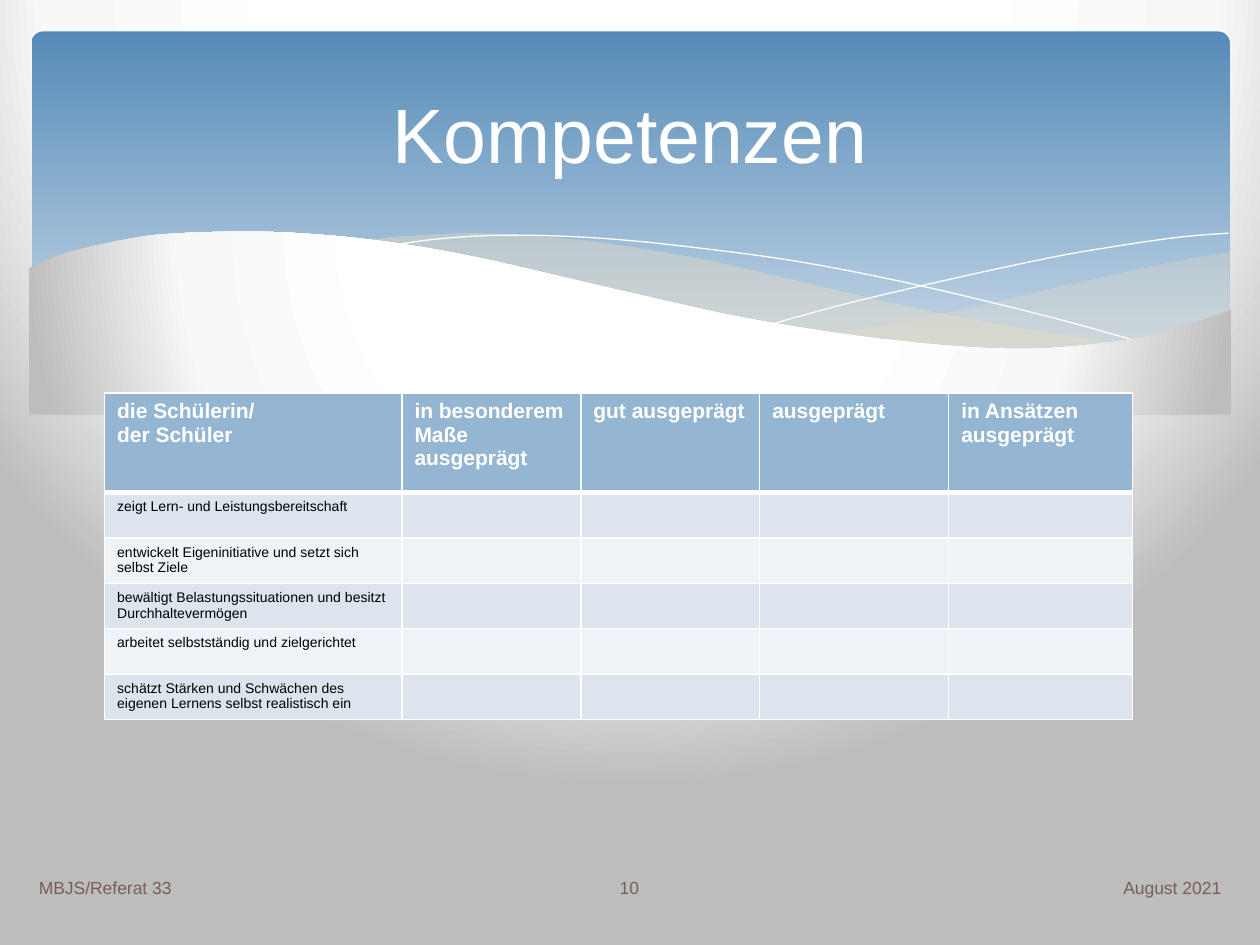
from lxml import etree
from pptx import Presentation
from pptx import util as u
from pptx.dml.color import RGBColor
from pptx.enum import shapes, text
from pptx.oxml import parse_xml
from pptx.oxml.ns import nsdecls, qn

WIDE, HIGH = 10, 7.5
FONT = "Arial"
HUES = {"white": "FFFFFF", "sand": "EBDDC3", "brown": "775F55", "black": "000000",
        "head": "94B6D2", "odd": "DCE5EE", "even": "EEF3F7"}
GLOW = [(40, "FFFFFF"), (74, "F8F8F8"), (100, "BDBDBD")]
ROUND = ('<a:path path="circle"><a:fillToRect l="20000" t="-40000" '
         'r="20000" b="140000"/></a:path>')
SKY = [(0, "558BB8"), (90, "BFD3E4")]
DOWN = '<a:lin ang="5400000" scaled="0"/>'

# Key points of the curves, in inches
BACK = ([(9.76, 2), (9.35, 2.07), (8.61, 2.23), (7.79, 2.42), (7.06, 2.57), (6.61, 2.65)],
        [(6.61, 2.65), (7.05, 2.71), (7.57, 2.76), (8.03, 2.78), (8.54, 2.76),
         (9.05, 2.69), (9.42, 2.59), (9.76, 2.47)])
FRONT = ([(8.93, 2.73), (8.37, 2.65), (7.75, 2.54), (7.06, 2.4), (6.29, 2.22),
          (5.69, 2.08), (5.14, 1.98), (4.65, 1.91), (4.2, 1.87), (3.8, 1.85),
          (3.44, 1.86), (3.13, 1.88), (2.86, 1.91)],
         [(2.86, 1.91), (3.42, 1.99), (4.04, 2.11), (4.49, 2.22), (5.3, 2.4),
          (6.01, 2.55), (6.65, 2.66), (7.22, 2.74), (7.73, 2.77), (8.18, 2.78),
          (8.57, 2.77), (8.93, 2.73)])
FALL = [(3.09, 1.95), (3.44, 1.9), (3.87, 1.87), (4.33, 1.87), (4.89, 1.9), (5.56, 1.97),
        (6.36, 2.08), (7.27, 2.26), (8.31, 2.51), (9.07, 2.72)]
RISE = [(6.13, 2.57), (6.72, 2.41), (7.48, 2.23), (8.36, 2.04), (8.95, 1.94),
        (9.38, 1.88), (9.75, 1.85)]
CREST = [(9.77, 2.46), (9.4, 2.59), (8.99, 2.69), (8.5, 2.75), (8.09, 2.77), (7.61, 2.75),
         (7.08, 2.7), (6.48, 2.62), (5.79, 2.5), (5.03, 2.33), (4.47, 2.2), (3.91, 2.07),
         (3.4, 1.97), (2.92, 1.9), (2.5, 1.86), (2.11, 1.84), (1.77, 1.84), (1.46, 1.85),
         (1.19, 1.87), (0.95, 1.91), (0.67, 1.97), (0.46, 2.03), (0.23, 2.13)]
BASE = [(0.23, 3.29), (9.77, 3.29)]

# Table content
COLS = [2.36, 1.42, 1.42, 1.5, 1.46]
HEADS = ["die Schülerin/\nder Schüler", "in besonderem Maße ausgeprägt",
         "gut ausgeprägt", "ausgeprägt", "in Ansätzen ausgeprägt"]
SKILLS = ["zeigt Lern- und Leistungsbereitschaft",
          "entwickelt Eigeninitiative und setzt sich selbst Ziele",
          "bewältigt Belastungssituationen und besitzt Durchhaltevermögen",
          "arbeitet selbstständig und zielgerichtet",
          "schätzt Stärken und Schwächen des eigenen Lernens selbst realistisch ein"]


def color(name):
    return RGBColor.from_string(HUES[name])


def box(*sides):
    return [u.Inches(s) for s in sides]


def write(frame, words, size=10, hue="brown", bold=False, align="LEFT"):
    """Fill a text frame, one paragraph per line."""
    frame.text = words
    frame.word_wrap = True
    for para in frame.paragraphs:
        para.alignment = getattr(text.PP_ALIGN, align)
        for run in para.runs:
            font = run.font
            font.name, font.size, font.bold = FONT, u.Pt(size), bold
            font.color.rgb = color(hue)
        if not para.runs:
            etree.SubElement(para._p, qn("a:endParaRPr"), sz=str(size * 100))


def blend(owner, fill, stops, way):
    """Give a shape or slide a gradient with its own stops."""
    fill.gradient()
    old = next(owner.element.iter(qn("a:gradFill")))
    marks = "".join(f'<a:gs pos="{at * 1000}"><a:srgbClr val="{hue}"/></a:gs>'
                    for at, hue in stops)
    old.getparent().replace(old, parse_xml(
        f'<a:gradFill {nsdecls("a")} rotWithShape="1"><a:gsLst>{marks}</a:gsLst>{way}</a:gradFill>'))


def smooth(keys, steps=6):
    """Run a Catmull-Rom curve through the key points."""
    ends = [keys[0], *keys, keys[-1]]
    curve = []
    for a, b, c, d in zip(ends, ends[1:], ends[2:], ends[3:]):
        for t in (n / steps for n in range(steps)):
            curve.append(tuple(
                (2 * q + (r - p) * t + (2 * p - 5 * q + 4 * r - s) * t ** 2
                 + (3 * q - p - 3 * r + s) * t ** 3) / 2
                for p, q, r, s in zip(a, b, c, d)))
    return curve + [keys[-1]]


def draw(slide, points, close=True):
    dots = [box(*p) for p in points]
    pen = slide.shapes.build_freeform(*dots[0], scale=1.0)
    pen.add_line_segments(dots[1:], close=close)
    shape = pen.convert_to_shape()
    shape.shadow.inherit = False
    return shape


def veil(slide, curves, alpha):
    """Draw a translucent wave between two curves."""
    shape = draw(slide, smooth(curves[0]) + smooth(curves[1]))
    shape.fill.solid()
    shape.fill.fore_color.rgb = color("sand")
    tint = next(shape.element.iter(qn("a:srgbClr")))
    etree.SubElement(tint, qn("a:alpha"), val=str(alpha * 1000))
    shape.line.fill.background()


def thread(slide, keys):
    shape = draw(slide, smooth(keys), close=False)
    shape.fill.background()
    shape.line.color.rgb = color("white")
    shape.line.width = u.Pt(0)


def banner(slide):
    band = slide.shapes.add_shape(shapes.MSO_SHAPE.ROUNDED_RECTANGLE, *box(0.25, 0.25, 9.51, 2.7))
    band.adjustments[0] = 0.034
    band.shadow.inherit = False
    blend(band, band.fill, SKY, DOWN)
    band.line.fill.background()
    veil(slide, BACK, 29)
    veil(slide, FRONT, 40)
    thread(slide, FALL)
    thread(slide, RISE)
    wave = draw(slide, smooth(CREST) + BASE)
    blend(wave, wave.fill, GLOW, ROUND)
    wave.line.fill.background()


def dress(cell, hue, top=1, base=1):
    """Set the fill and white borders of a cell."""
    cell.fill.solid()
    cell.fill.fore_color.rgb = color(hue)
    props = cell._tc.get_or_add_tcPr()
    for spot, (side, width) in enumerate(zip("LRTB", (1, 1, top, base))):
        props.insert(spot, parse_xml(
            f'<a:ln{side} {nsdecls("a")} w="{width * 12700}"><a:solidFill>'
            f'<a:srgbClr val="{HUES["white"]}"/></a:solidFill></a:ln{side}>'))


def grid(slide):
    rows = [HEADS] + [[skill] + [""] * (len(COLS) - 1) for skill in SKILLS]
    tall = [0.79] + [0.36] * len(SKILLS)
    table = slide.shapes.add_table(len(rows), len(COLS),
                                   *box(0.83, 3.12, sum(COLS), sum(tall))).table
    for col, width in zip(table.columns, COLS):
        col.width = u.Inches(width)
    for y, (row, height) in enumerate(zip(rows, tall)):
        table.rows[y].height = u.Inches(height)
        for x, words in enumerate(row):
            cell = table.cell(y, x)
            if y == 0:
                write(cell.text_frame, words, size=12, hue="white", bold=True)
                dress(cell, "head", base=3)
            else:
                write(cell.text_frame, words, size=8, hue="black")
                dress(cell, "odd" if y % 2 else "even", top=3 if y == 1 else 1)


def note(slide, left, width, words, align):
    frame = slide.shapes.add_textbox(*box(left, 6.84, width, 0.4)).text_frame
    write(frame, words, align=align)
    frame.vertical_anchor = text.MSO_ANCHOR.MIDDLE


def head(slide, words):
    title = slide.shapes.title
    title.left, title.top, title.width, title.height = box(0.5, 0.37, 9, 1.37)
    write(title.text_frame, words, size=44, hue="white", align="CENTER")
    title.text_frame.vertical_anchor = text.MSO_ANCHOR.MIDDLE
    title.element.getparent().append(title.element)  # in front of the banner


def main():
    deck = Presentation()
    deck.slide_width, deck.slide_height = box(WIDE, HIGH)
    slide = deck.slides.add_slide(deck.slide_layouts[5])
    blend(slide, slide.background.fill, GLOW, ROUND)
    banner(slide)
    grid(slide)
    # Footer
    note(slide, 0.21, 4.14, "MBJS/Referat 33", "LEFT")
    note(slide, 4.36, 1.27, "10", "CENTER")
    note(slide, 5.65, 4.14, "August 2021", "RIGHT")
    head(slide, "Kompetenzen")
    deck.save("out.pptx")


if __name__ == "__main__":
    main()
